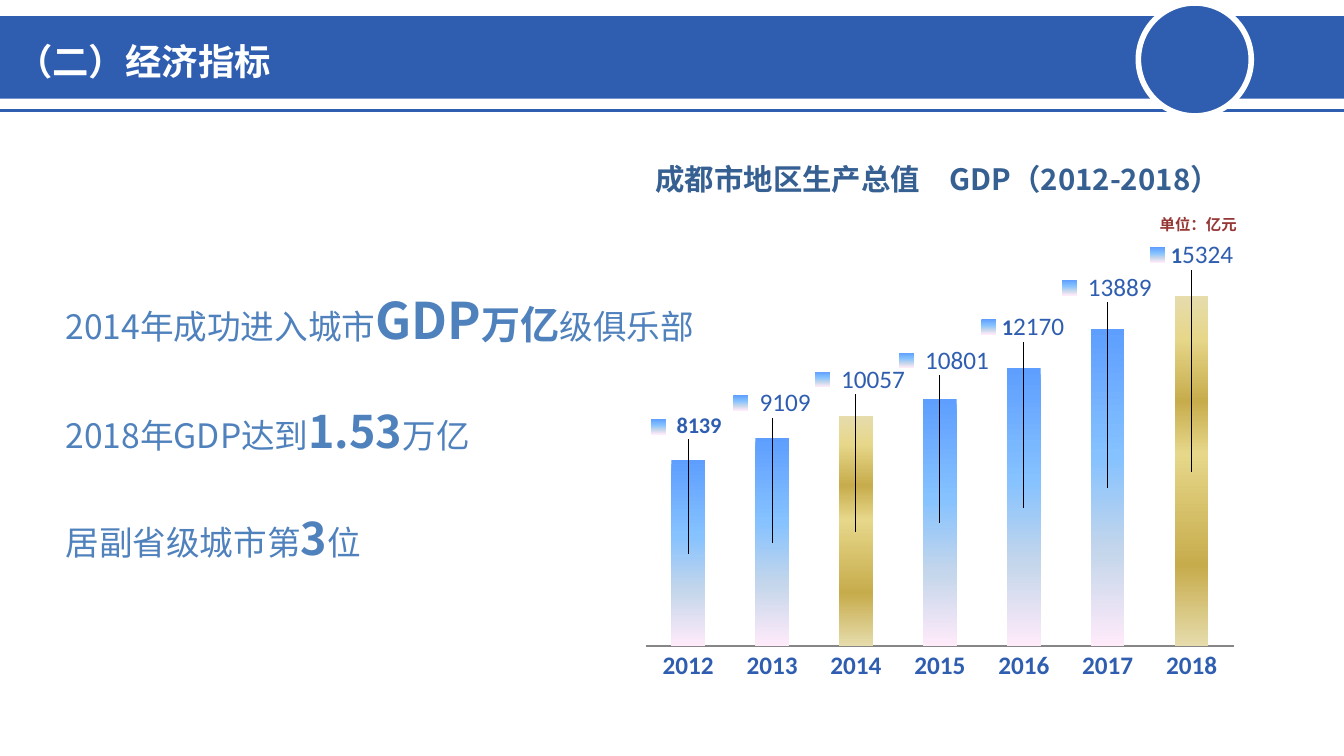
from dataclasses import dataclass

import pptx
import pptx.chart.data
import pptx.dml.color
import pptx.enum.chart
import pptx.enum.shapes
import pptx.enum.text
import pptx.oxml
import pptx.oxml.ns
import pptx.util
from pptx.util import Inches

TITLE = "（二）经济指标"
CHART_TITLE = "成都市地区生产总值　GDP（2012-2018）"
UNIT = "单位：亿元"
POINTS = [
    [("2014年成功进入城市", "body"), ("GDP", "huge"), ("万亿", "strong"), ("级俱乐部", "body")],
    [("2018年GDP达到", "body"), ("1.53", "large"), ("万亿", "body")],
    [("居副省级城市第", "body"), ("3", "large"), ("位", "body")],
]
SERIES = "绝对值（亿元）"
GDP = {"2012": 8139, "2013": 9109, "2014": 10057, "2015": 10801,
       "2016": 12170, "2017": 13889, "2018": 15324}
HIGHLIGHTS = ["2014", "2018"]
LABELS = [
    ([(" 8139", "label_strong")], -0.02, 0.34),
    ([(" 9109", "label")], 0, 0.35),
    ([(" 10057", "label")], 0.04, 0.37),
    ([(" 10801", "label")], 0.04, 0.39),
    ([("1", "label_first"), ("2170", "label")], -0.01, 0.41),
    ([(" 13889", "label")], -0.01, 0.41),
    ([("1", "label_first"), ("5324", "label")], 0, 0.41),
]
AXIS_MAX = 17000
CHART_BOX = (5.59, 1.56, 6.65, 5.38)
PLOT_BOX = (0.82, 1.0, 5.83, 3.85)


@dataclass
class Theme:
    cjk = "Noto Sans CJK SC"
    latin = "Calibri"
    blue = "2F5EB0"
    white = "FFFFFF"
    axis = "868686"
    bar = [(0, "5E9EFF"), (40, "85C2FF"), (70, "C4D6EB"), (100, "FFEBFA")]
    gold = [(0, "E6DCAC"), (12, "E6D78A"), (30, "C7AC4C"),
            (45, "E6D78A"), (77, "C7AC4C"), (100, "E6DCAC")]
    styles = {
        "title": (cjk, 26, True, white),
        "body": (cjk, 24, False, "4F81BD"),
        "strong": (cjk, 28, True, "4F81BD"),
        "large": (cjk, 32, True, "4F81BD"),
        "huge": (cjk, 36, True, "4F81BD"),
        "unit": (cjk, 11, True, "953735"),
        "chart_title": (cjk, 21, True, "376092"),
        "label": (latin, 18, False, blue),
        "label_first": (latin, 16, True, blue),
        "label_strong": (latin, 16, True, blue),
        "category": (latin, 18, True, blue),
    }


def rgb(value):
    return pptx.dml.color.RGBColor.from_string(value)


def set_font(font, style):
    font.name, size, font.bold, color = Theme.styles[style]
    font.size = pptx.util.Pt(size)
    font.color.rgb = rgb(color)


def add_run(p, text, style):
    r = p.add_run()
    r.text = text
    set_font(r.font, style)
    ea = pptx.oxml.parse_xml(
        f'<a:ea {pptx.oxml.ns.nsdecls("a")} typeface="{Theme.styles[style][0]}"/>')
    r._r.get_or_add_rPr().append(ea)


def place(shape, *box):
    shape.left, shape.top, shape.width, shape.height = map(Inches, box)


def add_caption(s, box, text, style, spacing, inset):
    tf = s.shapes.add_textbox(*map(Inches, box)).text_frame
    tf.word_wrap = True
    tf.margin_left = tf.margin_right = Inches(inset)
    tf.margin_top = tf.margin_bottom = Inches(0.05)
    p = tf.paragraphs[0]
    p.alignment = pptx.enum.text.PP_ALIGN.CENTER
    p.line_spacing = spacing
    add_run(p, text, style)


def add_header(s):
    kinds = pptx.enum.shapes.MSO_SHAPE
    band = s.shapes.add_shape(kinds.RECTANGLE, 0, Inches(0.16), Inches(13.33), Inches(0.82))
    rule = s.shapes.add_connector(pptx.enum.shapes.MSO_CONNECTOR.STRAIGHT,
                                  0, Inches(1.1), Inches(13.33), Inches(1.1))
    rule.line.color.rgb = rgb(Theme.blue)
    rule.line.width = pptx.util.Pt(2.25)
    rule.element.spPr.append(
        pptx.oxml.parse_xml(f'<a:effectLst {pptx.oxml.ns.nsdecls("a")}/>'))
    badge = s.shapes.add_shape(kinds.OVAL, *map(Inches, (11.29, 0.03, 1.12, 1.12)))
    for sp in (band, badge):
        sp.shadow.inherit = False
        sp.fill.solid()
        sp.fill.fore_color.rgb = rgb(Theme.blue)
    band.line.fill.background()
    badge.line.color.rgb = rgb(Theme.white)
    badge.line.width = pptx.util.Pt(4)


def fill_text(s):
    title, body = s.shapes.title, s.placeholders[1]
    for sp in (title, body):
        s.shapes.element.append(sp.element)
        sp.text_frame.word_wrap = True
        sp.text_frame.auto_size = pptx.enum.text.MSO_AUTO_SIZE.NONE
    place(title, 0.06, 0.2, 3.11, 0.72)
    place(body, 0.55, 2.22, 7.85, 3.6)
    title.text_frame.vertical_anchor = pptx.enum.text.MSO_ANCHOR.MIDDLE
    p = title.text_frame.paragraphs[0]
    p.alignment = pptx.enum.text.PP_ALIGN.LEFT
    p.line_spacing = 1.2
    add_run(p, TITLE, "title")
    tf = body.text_frame
    for i, runs in enumerate(POINTS):
        p = tf.add_paragraph() if i else tf.paragraphs[0]
        p.line_spacing = 2.0
        p.space_before = pptx.util.Pt(0)
        pPr = p._p.get_or_add_pPr()
        pPr.set("marL", "0")
        pPr.set("indent", "0")
        pPr.append(pptx.oxml.parse_xml(f'<a:buNone {pptx.oxml.ns.nsdecls("a")}/>'))
        for text, style in runs:
            add_run(p, text, style)


def manual_layout(extra="", **values):
    items = "".join(f'<c:{k} val="{v:.4f}"/>' for k, v in values.items())
    return pptx.oxml.parse_xml(
        f'<c:layout {pptx.oxml.ns.nsdecls("c")}><c:manualLayout>{extra}{items}'
        '</c:manualLayout></c:layout>')


def set_gradient(gs_list, stops):
    for gs in list(gs_list):
        gs_list.remove(gs)
    for pos, color in stops:
        gs_list.append(pptx.oxml.parse_xml(
            f'<a:gs {pptx.oxml.ns.nsdecls("a")} pos="{pos * 1000}">'
            f'<a:srgbClr val="{color}"/></a:gs>'))


def add_labels(chart, series):
    center = pptx.enum.chart.XL_LABEL_POSITION.CENTER
    group = series.data_labels
    set_font(group.font, "category")
    group.position = center
    group.show_value = group.show_percentage = True
    group.show_category_name = group.show_series_name = True
    for i, (runs, dx, gap) in enumerate(LABELS):
        label = series.points[i].data_label
        p = label.text_frame.paragraphs[0]
        for text, style in runs:
            add_run(p, text, style)
        label.position = center
    width, height = CHART_BOX[2:]
    nodes = chart.element.xpath(".//c:dLbl")
    for node, value, (runs, dx, gap) in zip(nodes, GDP.values(), LABELS):
        lift = value / AXIS_MAX * PLOT_BOX[3] / 2 + gap
        node.insert(1, manual_layout(x=dx / width, y=-lift / height))
        for flag in ("LegendKey", "CatName", "SerName", "Percent"):
            node.xpath(f"c:show{flag}")[0].set("val", "1")
    for leader in chart.element.xpath(".//c:showLeaderLines"):
        leader.getparent().remove(leader)
    c15 = "http://schemas.microsoft.com/office/drawing/2012/chart"
    chart.element.xpath(".//c:ser/c:dLbls")[0].append(pptx.oxml.parse_xml(
        f'<c:extLst {pptx.oxml.ns.nsdecls("c")}>'
        f'<c:ext uri="{{CE6537A1-D6FC-4f65-9D91-7224C49458BB}}" xmlns:c15="{c15}">'
        '<c15:showLeaderLines val="0"/></c:ext></c:extLst>'))


def add_gdp_chart(s):
    enums = pptx.enum.chart
    data = pptx.chart.data.CategoryChartData(number_format="0")
    data.categories = list(GDP)
    data.add_series(SERIES, list(GDP.values()))
    chart = s.shapes.add_chart(enums.XL_CHART_TYPE.COLUMN_STACKED,
                               *map(Inches, CHART_BOX), data).chart
    chart.has_title = chart.has_legend = False
    chart.font.name, chart.font.size = Theme.latin, pptx.util.Pt(18)
    axis = chart.category_axis
    axis.major_tick_mark = enums.XL_TICK_MARK.NONE
    axis.format.line.color.rgb = rgb(Theme.axis)
    set_font(axis.tick_labels.font, "category")
    values = chart.value_axis
    values.minimum_scale, values.maximum_scale, values.major_unit = 0, AXIS_MAX, 1000
    values.has_major_gridlines = values.visible = False
    plot = chart.plots[0]
    plot.vary_by_categories = False
    plot.gap_width, plot.overlap = 150, 100
    series = plot.series[0]
    series.invert_if_negative = False
    golden = [series.points[list(GDP).index(year)] for year in HIGHLIGHTS]
    for bar in [series] + golden:
        bar.format.fill.gradient()
        bar.format.fill.gradient_angle = 270
    for i, gs_list in enumerate(chart.element.xpath(".//c:ser//a:gsLst")):
        set_gradient(gs_list, Theme.gold if i else Theme.bar)
    add_labels(chart, series)
    area = chart.element.xpath(".//c:plotArea")[0]
    for old in area.xpath("c:layout"):
        area.remove(old)
    modes = '<c:layoutTarget val="inner"/><c:xMode val="edge"/><c:yMode val="edge"/>'
    shares = {k: v / CHART_BOX[2 + i % 2] for i, (k, v) in enumerate(zip("xywh", PLOT_BOX))}
    area.insert(0, manual_layout(modes, **shares))


prs = pptx.Presentation()
prs.slide_width, prs.slide_height = Inches(13.33), Inches(7.5)
s = prs.slides.add_slide(prs.slide_layouts[1])
add_header(s)
fill_text(s)
add_gdp_chart(s)
add_caption(s, (11.35, 2.05, 1.07, 0.28), UNIT, "unit", 1.2, 0.07)
add_caption(s, (6.23, 1.55, 6.14, 0.45), CHART_TITLE, "chart_title", 1.0, 0.1)
prs.save("out.pptx")
